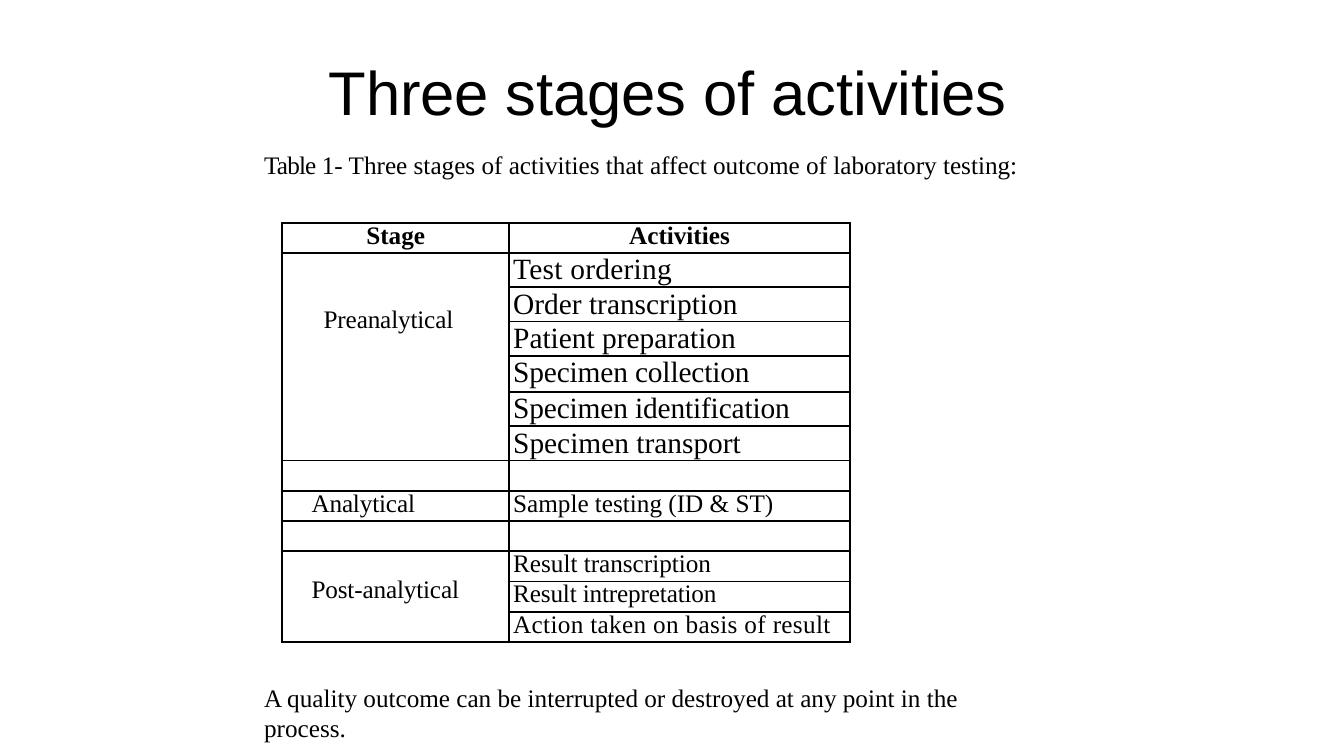
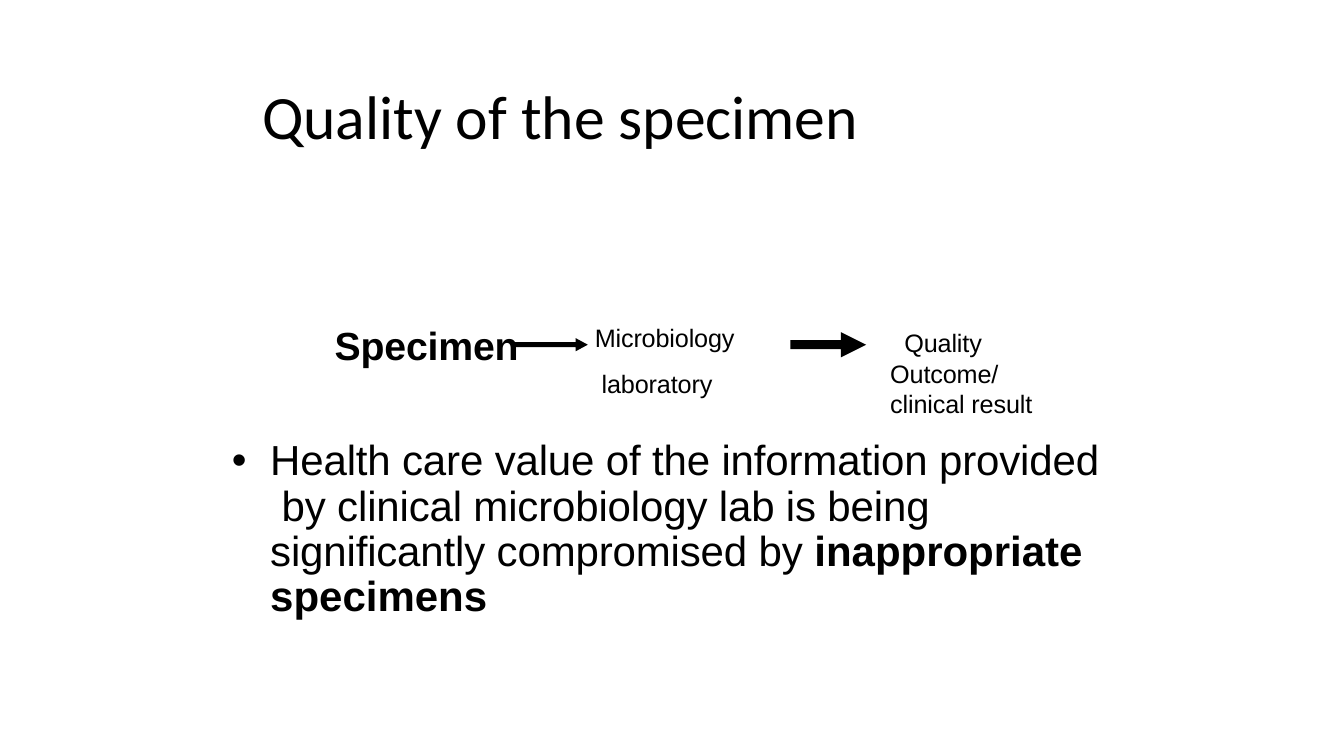
"""Build two slides on the stages and specimen quality of laboratory testing."""
from dataclasses import dataclass
from typing import Optional

from lxml import etree
from pptx import Presentation
from pptx.dml import color
from pptx.enum import text as text_enum
from pptx.oxml import ns
from pptx.slide import Slide
from pptx.table import _Cell as Cell
from pptx.text.text import _Paragraph as Paragraph
from pptx.util import Inches, Pt


@dataclass(frozen=True)
class Theme:
    """Colours, fonts and type sizes shared by the slides."""
    ink: color.RGBColor = color.RGBColor(0, 0, 0)
    sans: str = "Arial"
    serif: str = "Times New Roman"
    title_font: str = "Calibri"
    title: float = 44
    bullet: float = 30
    lead: float = 28
    entry: float = 21
    body: float = 18
    border: float = 1.5


THEME = Theme()


@dataclass(frozen=True)
class Run:
    """A stretch of text with one weight and letter spacing in points."""
    text: str
    bold: bool = False
    spacing: float = 0


@dataclass(frozen=True)
class Label:
    """A text box holding one paragraph; lengths are in inches."""
    left: float
    top: float
    width: float
    height: float
    runs: tuple[Run, ...]
    size: float = THEME.body
    font: str = THEME.sans
    middle: bool = False
    line_spacing: float = 1.0
    margin: float = 0
    first_indent: float = 0
    bullet: Optional[str] = None
    inset_top: float = 0.01
    space_before: float = 1


@dataclass(frozen=True)
class BlockArrow:
    """A solid arrow pointing right; lengths are in inches."""
    left: float
    width: float
    middle: float
    shaft: float
    head_length: float
    head_height: float


@dataclass(frozen=True)
class Activity:
    """One row of the activities column."""
    text: str = ""
    height: float = 0.3
    size: float = THEME.body
    spacing: float = 0


@dataclass(frozen=True)
class Stage:
    """A stage name beside the rows of its activities."""
    name: str
    activities: tuple[Activity, ...]
    inset_left: float = 0.29
    inset_top: float = 0


GAP = Stage("", (Activity(),))
STAGES = (
    Stage("Preanalytical", (
        Activity("Test ordering", 0.34, THEME.entry, 0.2),
        Activity("Order transcription", 0.34, THEME.entry),
        Activity("Patient preparation", 0.34, THEME.entry),
        Activity("Specimen collection", 0.36, THEME.entry, -0.1),
        Activity("Specimen identification", 0.34, THEME.entry, -0.1),
        Activity("Specimen transport", 0.34, THEME.entry),
    ), 0.41, 0.54),
    GAP,
    Stage("Analytical", (Activity("Sample testing (ID & ST)"),)),
    GAP,
    Stage("Post-analytical", (
        Activity("Result transcription"),
        Activity("Result intrepretation", spacing=-0.1),
        Activity("Action taken on basis of result", spacing=0.25),
    ), inset_top=0.26),
)
HEADER_HEIGHT = 0.3
COLUMN_WIDTHS = (2.25, 3.38)

STAGE_LABELS = (
    Label(3.26, 0.52, 6.9, 0.76, (Run("Three stages of activities", spacing=-0.1),),
          THEME.title, middle=True),
    Label(2.62, 1.47, 7.8, 0.33, (
        Run("Table ", spacing=-0.6),
        Run("1- Three stages of activities that affect outcome of laboratory testing:"),
    ), font=THEME.serif),
    Label(2.62, 6.76, 7.5, 0.6, (
        Run("A quality outcome can be interrupted or destroyed at any point in the process."),
    ), font=THEME.serif),
)
SPECIMEN_LABELS = (
    Label(2.6, 0.75, 9, 0.76, (Run("Quality of the specimen"),),
          THEME.title, THEME.title_font, middle=True),
    Label(2.29, 4.3, 8.7, 1.88, (
        Run("Health care value of the information provided\v by clinical microbiology "
            "lab is being significantly compromised by ", spacing=-0.1),
        Run("inappropriate specimens", bold=True),
    ), THEME.bullet, line_spacing=0.9, margin=0.39, first_indent=-0.38, bullet="•",
        inset_top=0.06, space_before=4.6),
    Label(3.32, 3.18, 1.9, 0.5, (Run("Specimen", True, -0.1),), THEME.lead),
    Label(5.9, 3.04, 1.5, 0.93, (Run("Microbiology\v laboratory", spacing=-0.1),),
          line_spacing=1.51),
    Label(8.83, 3.24, 1.5, 0.93, (Run("Quality\vOutcome/\vclinical result", spacing=-0.1),),
          first_indent=0.14),
)
ARROWS = (
    BlockArrow(5.08, 0.75, 3.42, 0.05, 0.12, 0.13),
    BlockArrow(7.84, 0.75, 3.42, 0.09, 0.25, 0.25),
)


def write_runs(paragraph: Paragraph, runs: tuple[Run, ...], size: float, font: str) -> None:
    """Fill a paragraph with formatted runs."""
    for index, part in enumerate(runs):
        if index == 0:
            paragraph.text = part.text
            written = paragraph.runs
        else:
            added = paragraph.add_run()
            added.text = part.text
            written = (added,)
        for run in written:
            run.font.name = font
            run.font.size = Pt(size)
            run.font.bold = part.bold
            run.font.color.rgb = THEME.ink
            run._r.get_or_add_rPr().set("spc", str(round(part.spacing * 100)))


def add_label(slide: Slide, label: Label) -> None:
    """Add a text box for a label."""
    shape = slide.shapes.add_textbox(
        Inches(label.left), Inches(label.top), Inches(label.width), Inches(label.height))
    frame = shape.text_frame
    frame.word_wrap = True
    frame.margin_left = frame.margin_right = frame.margin_bottom = 0
    frame.margin_top = Inches(label.inset_top)
    anchors = text_enum.MSO_ANCHOR
    frame.vertical_anchor = anchors.MIDDLE if label.middle else anchors.TOP
    paragraph = frame.paragraphs[0]
    write_runs(paragraph, label.runs, label.size, label.font)
    paragraph.line_spacing = label.line_spacing
    paragraph.space_before = Pt(label.space_before)
    properties = paragraph._p.get_or_add_pPr()
    properties.set("marL", str(Inches(label.margin)))
    properties.set("indent", str(Inches(label.first_indent)))
    if label.bullet:
        font = etree.SubElement(properties, ns.qn("a:buFont"))
        font.set("typeface", label.font)
        etree.SubElement(properties, ns.qn("a:buChar")).set("char", label.bullet)


def set_borders(cell: Cell) -> None:
    """Draw a solid line on all four sides of a cell."""
    properties = cell._tc.get_or_add_tcPr()
    for position, side in enumerate(("lnL", "lnR", "lnT", "lnB")):
        line = etree.Element(ns.qn(f"a:{side}"), w=str(Pt(THEME.border)))
        fill = etree.SubElement(line, ns.qn("a:solidFill"))
        etree.SubElement(fill, ns.qn("a:srgbClr")).set("val", str(THEME.ink))
        properties.insert(position, line)


def fill_cell(cell: Cell, run: Run, size: float = THEME.body, inset_left: float = 0,
              inset_top: float = 0, centred: bool = False) -> None:
    """Write one line of text into a table cell."""
    cell.margin_right = cell.margin_bottom = 0
    cell.margin_left = Inches(inset_left)
    cell.margin_top = Inches(inset_top)
    paragraph = cell.text_frame.paragraphs[0]
    write_runs(paragraph, (run,), size, THEME.serif)
    paragraph.line_spacing = Pt(19.1 if size == THEME.body else 23.7)
    alignments = text_enum.PP_ALIGN
    paragraph.alignment = alignments.CENTER if centred else alignments.LEFT


def add_stage_table(slide: Slide) -> None:
    """Add the table of stages and their activities."""
    heights = [HEADER_HEIGHT] + [
        activity.height for stage in STAGES for activity in stage.activities]
    table = slide.shapes.add_table(
        len(heights), len(COLUMN_WIDTHS), Inches(2.8), Inches(2.21),
        Inches(sum(COLUMN_WIDTHS)), Inches(sum(heights))).table
    table.first_row = table.horz_banding = False
    for column, width in zip(table.columns, COLUMN_WIDTHS):
        column.width = Inches(width)
    for row, height in zip(table.rows, heights):
        row.height = Inches(height)
    for cell in table.iter_cells():
        cell.fill.background()
        set_borders(cell)
    for index, heading in enumerate(("Stage", "Activities")):
        fill_cell(table.cell(0, index), Run(heading, bold=True), centred=True)
    first = 1
    for stage in STAGES:
        last = first + len(stage.activities) - 1
        for index, activity in enumerate(stage.activities, first):
            fill_cell(table.cell(index, 0), Run(""))
            fill_cell(table.cell(index, 1), Run(activity.text, spacing=activity.spacing),
                      activity.size, 0.04)
        if last > first:
            table.cell(first, 0).merge(table.cell(last, 0))
        fill_cell(table.cell(first, 0), Run(stage.name, spacing=-0.1),
                  inset_left=stage.inset_left, inset_top=stage.inset_top)
        first = last + 1


def add_arrow(slide: Slide, arrow: BlockArrow) -> None:
    """Add a solid arrow outline."""
    tip = arrow.left + arrow.width
    neck = tip - arrow.head_length
    shaft, head = arrow.shaft / 2, arrow.head_height / 2
    outline = [(arrow.left, -shaft), (neck, -shaft), (neck, -head), (tip, 0),
               (neck, head), (neck, shaft), (arrow.left, shaft)]
    points = [(Inches(x), Inches(arrow.middle + offset)) for x, offset in outline]
    builder = slide.shapes.build_freeform(*points[0])
    builder.add_line_segments(points[1:], close=True)
    shape = builder.convert_to_shape()
    shape.shadow.inherit = False
    shape.fill.solid()
    shape.fill.fore_color.rgb = THEME.ink
    shape.line.fill.background()


def main() -> None:
    """Build and save the presentation."""
    presentation = Presentation()
    presentation.slide_width, presentation.slide_height = Inches(13.33), Inches(7.5)
    blank = presentation.slide_layouts[6]
    stages = presentation.slides.add_slide(blank)
    specimen = presentation.slides.add_slide(blank)
    for slide, labels in ((stages, STAGE_LABELS), (specimen, SPECIMEN_LABELS)):
        for label in labels:
            add_label(slide, label)
    add_stage_table(stages)
    for arrow in ARROWS:
        add_arrow(specimen, arrow)
    presentation.save("out.pptx")


if __name__ == "__main__":
    main()
